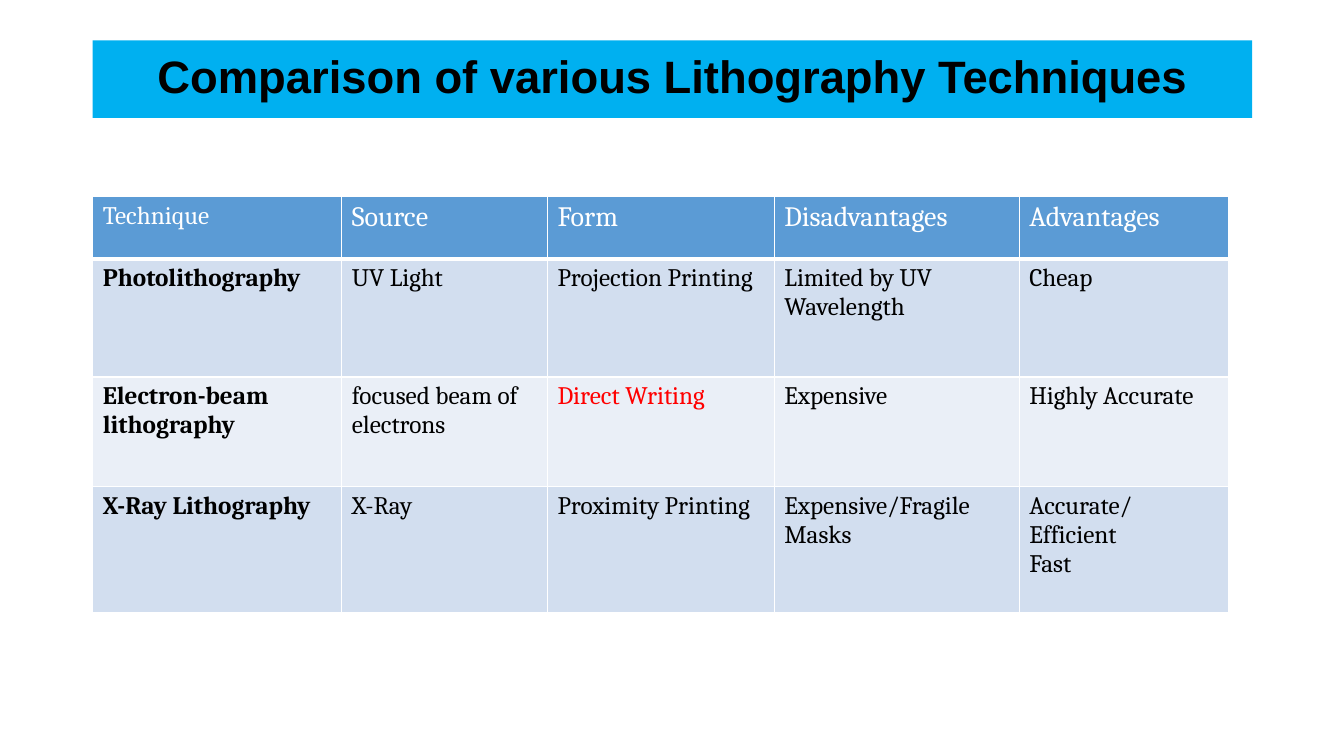
from dataclasses import dataclass

import pptx
import pptx.dml.color
import pptx.enum.shapes
import pptx.enum.text
import pptx.oxml
import pptx.oxml.ns
import pptx.presentation
import pptx.slide
import pptx.table
import pptx.text.text
import pptx.util

RGBColor = pptx.dml.color.RGBColor
Inches = pptx.util.Inches

BLACK = RGBColor(0x00, 0x00, 0x00)
WHITE = RGBColor(0xFF, 0xFF, 0xFF)
RED = RGBColor(0xFF, 0x00, 0x00)
TITLE_BLUE = RGBColor(0x00, 0xB0, 0xF0)
HEADING_BLUE = RGBColor(0x5B, 0x9B, 0xD5)
ODD_BLUE = RGBColor(0xD2, 0xDE, 0xEF)
EVEN_BLUE = RGBColor(0xEA, 0xEF, 0xF7)

LEFT = 0.92
COLUMN_WIDTHS = (2.47, 2.04, 2.25, 2.43, 2.08)
HEADINGS = ("Technique", "Source", "Form", "Disadvantages", "Advantages")
HEADING_HEIGHT = 0.62


@dataclass(frozen=True)
class Technique:
    name: str
    source: str
    form: str
    disadvantages: str
    advantages: str
    height: float
    form_color: RGBColor = BLACK


TECHNIQUES = (
    Technique("Photolithography", "UV Light", "Projection Printing",
              "Limited by UV Wavelength", "Cheap", 1.17),
    Technique("Electron-beam lithography", "focused beam of electrons", "Direct Writing",
              "Expensive", "Highly Accurate", 1.09, form_color=RED),
    Technique("X-Ray Lithography", "X-Ray", "Proximity Printing",
              "Expensive/Fragile Masks", "Accurate/Efficient\nFast", 1.25),
)


def write_text(
    frame: pptx.text.text.TextFrame,
    text: str,
    *,
    size: float = 18,
    font: str = "Cambria",
    color: RGBColor = BLACK,
    bold: bool = False,
    align: pptx.enum.text.PP_ALIGN = pptx.enum.text.PP_ALIGN.LEFT,
    line_spacing: float = 1.0,
) -> None:
    frame.word_wrap = True
    frame.text = text
    for paragraph in frame.paragraphs:
        paragraph.alignment = align
        paragraph.line_spacing = line_spacing
        for run in paragraph.runs:
            run.font.size = pptx.util.Pt(size)
            run.font.name = font
            run.font.bold = bold
            run.font.color.rgb = color


def style_cell(cell: pptx.table._Cell, fill: RGBColor, bottom_width: float = 1) -> None:
    properties = cell._tc.get_or_add_tcPr()
    for side, width in (("L", 1), ("R", 1), ("T", 1), ("B", bottom_width)):
        properties.append(pptx.oxml.parse_xml(
            f'<a:ln{side} {pptx.oxml.ns.nsdecls("a")} w="{pptx.util.Pt(width)}">'
            f'<a:solidFill><a:srgbClr val="{WHITE}"/></a:solidFill></a:ln{side}>'
        ))
    cell.fill.solid()
    cell.fill.fore_color.rgb = fill


def draw_title(slide: pptx.slide.Slide) -> None:
    banner = slide.shapes.add_shape(
        pptx.enum.shapes.MSO_SHAPE.RECTANGLE,
        Inches(LEFT), Inches(0.4), Inches(11.5), Inches(0.77),
    )
    banner.shadow.inherit = False
    banner.fill.solid()
    banner.fill.fore_color.rgb = TITLE_BLUE
    banner.line.fill.background()
    banner.text_frame.vertical_anchor = pptx.enum.text.MSO_ANCHOR.MIDDLE
    write_text(
        banner.text_frame, "Comparison of various Lithography Techniques",
        size=32.4, font="Arial", bold=True,
        align=pptx.enum.text.PP_ALIGN.CENTER, line_spacing=0.9,
    )


def draw_comparison(slide: pptx.slide.Slide) -> None:
    heights = (HEADING_HEIGHT, *(technique.height for technique in TECHNIQUES))
    comparison = slide.shapes.add_table(
        len(heights), len(HEADINGS), Inches(LEFT), Inches(1.95),
        Inches(sum(COLUMN_WIDTHS)), Inches(sum(heights)),
    ).table
    for column, width in zip(comparison.columns, COLUMN_WIDTHS):
        column.width = Inches(width)
    for row, height in zip(comparison.rows, heights):
        row.height = Inches(height)

    for index, heading in enumerate(HEADINGS):
        cell = comparison.cell(0, index)
        style_cell(cell, HEADING_BLUE, bottom_width=3)
        write_text(cell.text_frame, heading, size=20 if index else 18, color=WHITE)

    for row_index, technique in enumerate(TECHNIQUES, start=1):
        entries = (technique.name, technique.source, technique.form,
                   technique.disadvantages, technique.advantages)
        for index, entry in enumerate(entries):
            cell = comparison.cell(row_index, index)
            style_cell(cell, ODD_BLUE if row_index % 2 else EVEN_BLUE)
            color = technique.form_color if HEADINGS[index] == "Form" else BLACK
            write_text(cell.text_frame, entry, color=color, bold=index == 0)


def main() -> None:
    presentation = pptx.Presentation()
    presentation.slide_width = Inches(13.33)
    presentation.slide_height = Inches(7.5)
    slide = presentation.slides.add_slide(presentation.slide_layouts[6])
    draw_title(slide)
    draw_comparison(slide)
    presentation.save("out.pptx")


if __name__ == "__main__":
    main()
